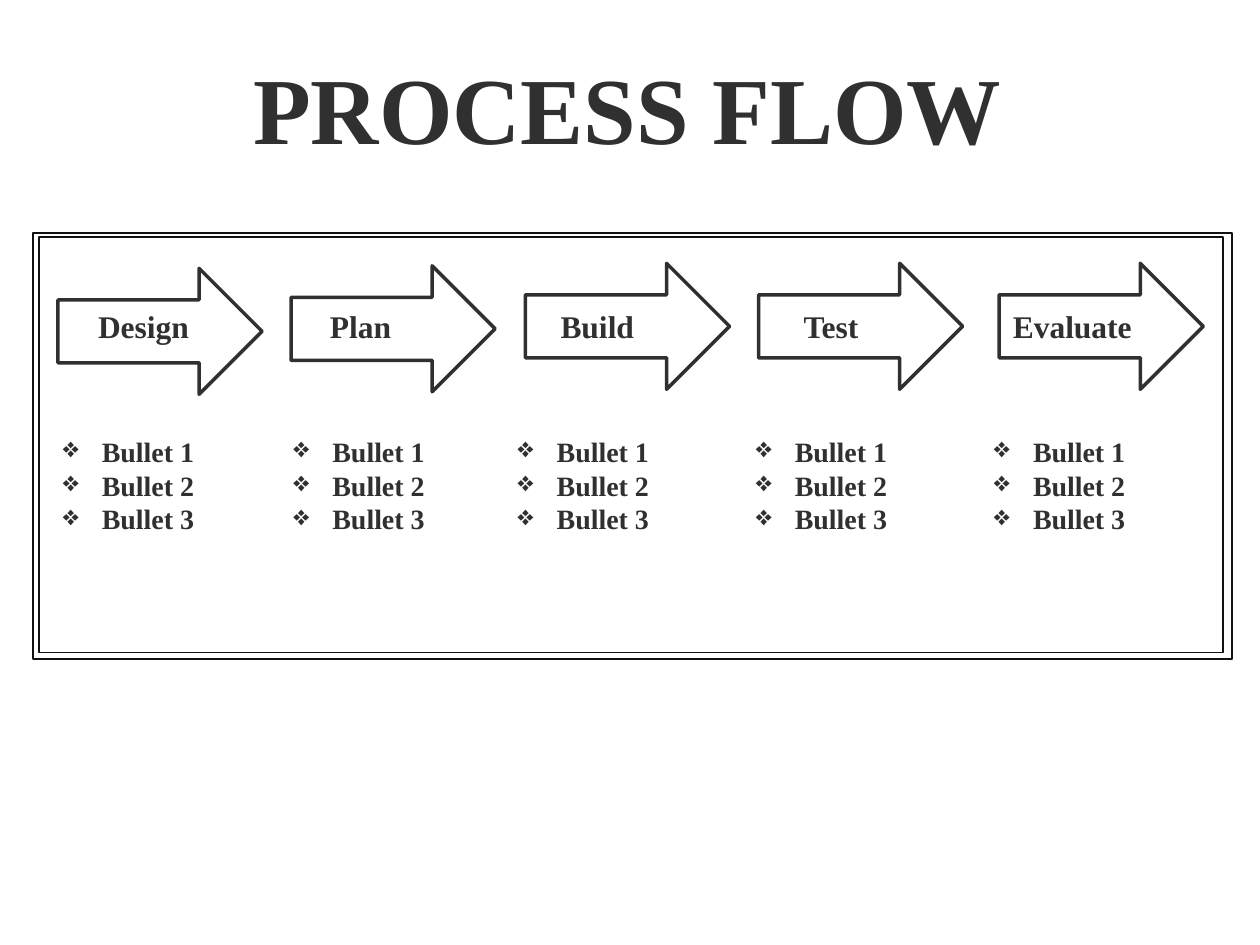
from dataclasses import dataclass
from typing import Any

from lxml.etree import SubElement
from pptx import Presentation
from pptx.dml.color import RGBColor as Rgb
from pptx.enum.shapes import MSO_SHAPE as Preset
from pptx.enum.text import MSO_AUTO_SIZE as AutoSize, PP_ALIGN as Align
from pptx.oxml.ns import qn
from pptx.util import Emu, Pt

EMU_PER_PX = 9144


@dataclass(frozen=True)
class Theme:
    """Colours, font and point sizes of the slide."""

    ink: Rgb = Rgb(0x30, 0x30, 0x30)
    frame: Rgb = Rgb(0x11, 0x11, 0x11)
    font: str = "Times New Roman"
    title: int = 54
    label: int = 18
    bullet: int = 16
    arrow_line: int = 2
    frame_line: int = 1


@dataclass(frozen=True)
class Area:
    """A rectangle in px, at 100 px to the inch."""

    left: int
    top: int
    width: int
    height: int

    def emu(self) -> list[Emu]:
        """Return the rectangle as EMU lengths."""
        return [Emu(px * EMU_PER_PX) for px in (self.left, self.top, self.width, self.height)]


@dataclass(frozen=True)
class Step:
    """One step of the process with its arrow, label and list."""

    name: str
    label_left: int
    label_width: int
    arrow_left: int
    arrow_top: int
    list_left: int


THEME = Theme()
INDENT = 31 * EMU_PER_PX
BULLETS = ("Bullet 1", "Bullet 2", "Bullet 3")
STEPS = (
    Step("Design", 68, 93, 46, 213, 40),
    Step("Plan", 252, 69, 231, 211, 223),
    Step("Build", 435, 79, 417, 209, 401),
    Step("Test", 628, 64, 602, 209, 590),
    Step("Evaluate", 794, 116, 793, 209, 779),
)
FRAMES = (Area(26, 185, 952, 338), Area(31, 188, 940, 330))


def apply(target: Any, values: dict[str, Any]) -> None:
    """Set each named attribute on the target."""
    for name, value in values.items():
        setattr(target, name, value)


def add_bullet(para: Any) -> None:
    """Give the paragraph a hanging diamond bullet."""
    props = para._p.get_or_add_pPr()
    props.set("marL", str(INDENT))
    props.set("indent", str(-INDENT))
    SubElement(props, qn("a:buChar")).set("char", "❖")


def add_text(page: Any, area: Area, lines: tuple[str, ...], size: int,
             align: Align = Align.LEFT, bulleted: bool = False) -> None:
    """Add bold text, either fitted to its words or as a bulleted list."""
    box = page.shapes.add_textbox(*area.emu())
    frame = box.text_frame
    fit = AutoSize.NONE if bulleted else AutoSize.SHAPE_TO_FIT_TEXT
    apply(frame, {"word_wrap": bulleted, "auto_size": fit})
    for index, line in enumerate(lines):
        para = frame.add_paragraph() if index else frame.paragraphs[0]
        para.alignment = align
        if bulleted:
            add_bullet(para)
        span = para.add_run()
        span.text = line
        apply(span.font, {"name": THEME.font, "size": Pt(size), "bold": True})
        span.font.color.rgb = THEME.ink


def add_outline(page: Any, preset: Preset, area: Area, color: Rgb, width: int) -> None:
    """Add an unfilled preset shape."""
    shape = page.shapes.add_shape(preset, *area.emu())
    shape.shadow.inherit = False
    shape.fill.background()
    shape.line.color.rgb = color
    shape.line.width = Pt(width)


def main() -> None:
    """Build and save the process flow slide."""
    deck = Presentation()
    apply(deck, {"slide_width": Emu(1000 * EMU_PER_PX), "slide_height": Emu(750 * EMU_PER_PX)})
    page = deck.slides.add_slide(deck.slide_layouts[6])
    for step in STEPS:
        add_text(page, Area(step.list_left, 340, 151, 257), BULLETS, THEME.bullet, bulleted=True)
        add_text(page, Area(step.label_left, 239, step.label_width, 40), (step.name,), THEME.label)
        add_outline(page, Preset.RIGHT_ARROW, Area(step.arrow_left, step.arrow_top, 162, 100),
                    THEME.ink, THEME.arrow_line)
    for area in FRAMES:
        add_outline(page, Preset.RECTANGLE, area, THEME.frame, THEME.frame_line)
    add_text(page, Area(188, 35, 620, 101), ("PROCESS FLOW",), THEME.title, Align.CENTER)
    deck.save("out.pptx")


if __name__ == "__main__":
    main()
